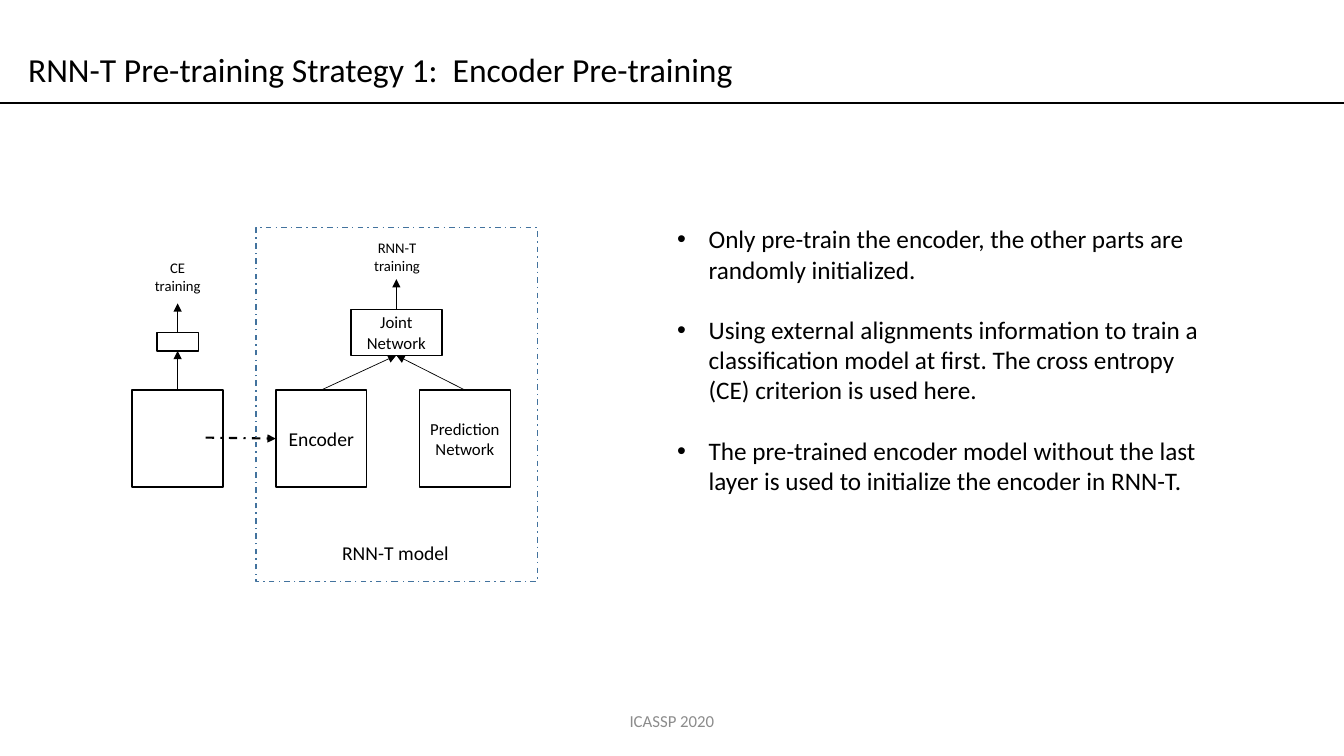
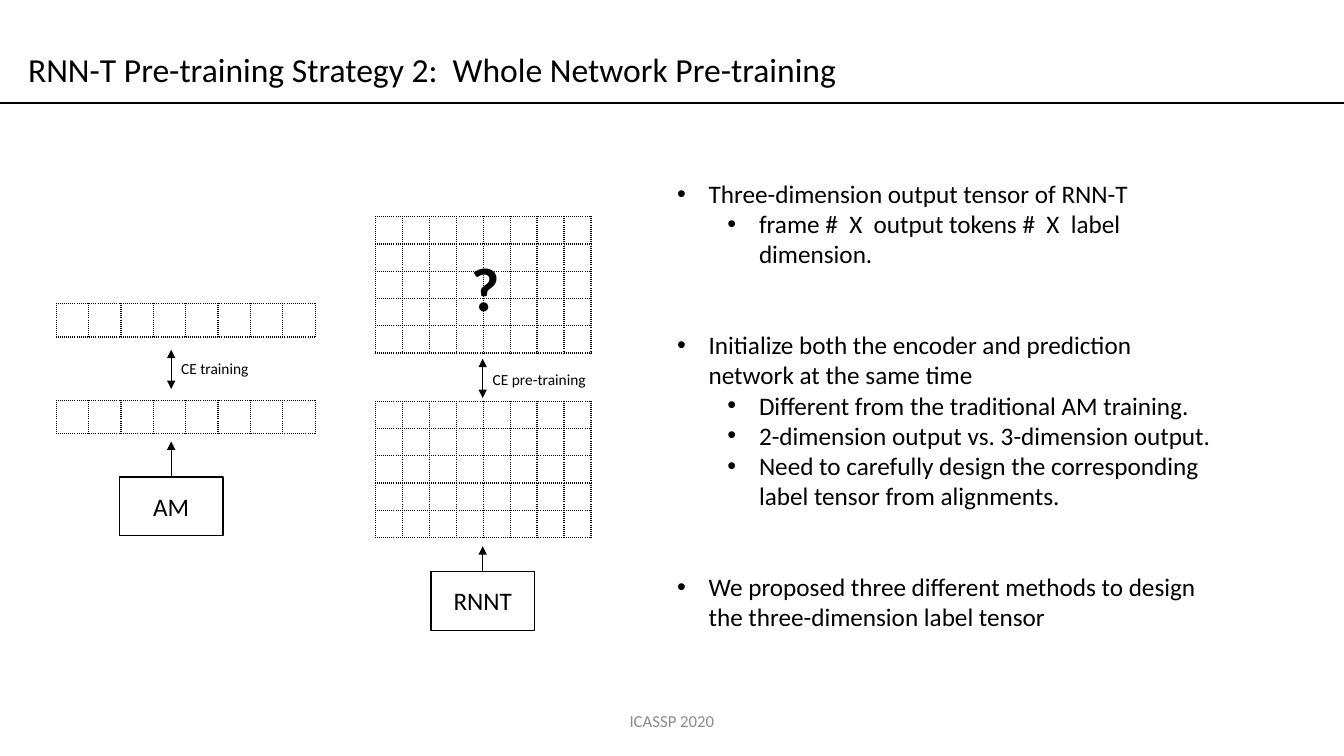
from lxml.etree import SubElement
from pptx import Presentation
from pptx.dml.color import RGBColor
from pptx.enum.dml import MSO_LINE
from pptx.enum.shapes import MSO_CONNECTOR, MSO_SHAPE
from pptx.enum.text import MSO_ANCHOR as ANCHOR, PP_ALIGN as ALIGN
from pptx.oxml.ns import qn
from pptx.util import Pt

BLACK = RGBColor(0x00, 0x00, 0x00)
WHITE = RGBColor(0xFF, 0xFF, 0xFF)
GRAY = RGBColor(0x8C, 0x8C, 0x8C)
BLUE = RGBColor(0x43, 0x73, 0x9E)
FONT = "Calibri"
PAGE_WIDTH, PAGE_HEIGHT = 960, 540
TOP, LEFT, BOTTOM = 0, 1, 2
INDENT = 22.5
BLANK_LINE = 21.6


def add_box(page, text, left, top, width, height, size=12, color=BLACK,
            align=ALIGN.CENTER, anchor=ANCHOR.TOP, outlined=False):
    area = Pt(left), Pt(top), Pt(width), Pt(height)
    if outlined:
        box = page.shapes.add_shape(MSO_SHAPE.RECTANGLE, *area)
        box.shadow.inherit = False
        box.fill.solid()
        box.fill.fore_color.rgb = WHITE
        box.line.color.rgb = BLACK
        box.line.width = Pt(1)
        box.text_frame.margin_left = box.text_frame.margin_right = 0
        anchor = ANCHOR.MIDDLE
    else:
        box = page.shapes.add_textbox(*area)
    frame = box.text_frame
    frame.word_wrap = True
    frame.vertical_anchor = anchor
    frame.text = text
    for para in frame.paragraphs:
        para.alignment = align
        for span in para.runs:
            span.font.name = FONT
            span.font.size = Pt(size)
            span.font.color.rgb = color
    return box


def add_line(page, start, end, width=0.5, dash=None, arrows=("tailEnd",)):
    line = page.shapes.add_connector(MSO_CONNECTOR.STRAIGHT, *map(Pt, start + end))
    line.line.color.rgb = BLACK
    line.line.width = Pt(width)
    if dash:
        line.line.dash_style = dash
    properties = line._element.spPr
    for arrow in arrows:
        SubElement(properties.find(qn("a:ln")), qn(f"a:{arrow}"), type="triangle")
    SubElement(properties, qn("a:effectLst"))
    return line


deck = Presentation()
deck.slide_width, deck.slide_height = Pt(PAGE_WIDTH), Pt(PAGE_HEIGHT)

contents = [
    ("RNN-T Pre-training Strategy 1:  Encoder Pre-training", 156.2, [
        (0, 0, "Only pre-train the encoder, the other parts are randomly initialized."),
        (0, 1, "Using external alignments information to train a classification model at first. "
               "The cross entropy (CE) criterion is used here."),
        (0, 1, "The pre-trained encoder model without the last layer is used to initialize "
               "the encoder in RNN-T."),
    ]),
    ("RNN-T Pre-training Strategy 2:  Whole Network Pre-training", 123.8, [
        (0, 0, "Three-dimension output tensor of RNN-T"),
        (1, 0, "frame #  X  output tokens #  X  label dimension."),
        (0, 2, "Initialize both the encoder and prediction network at the same time"),
        (1, 0, "Different from the traditional AM training."),
        (1, 0, "2-dimension output vs. 3-dimension output."),
        (1, 0, "Need to carefully design the corresponding label tensor from alignments."),
        (0, 2, "We proposed three different methods to design the three-dimension label tensor"),
    ]),
]

pages = []
for title, body_top, bullets in contents:
    page = deck.slides.add_slide(deck.slide_layouts[6])
    pages.append(page)
    add_box(page, title, 13, 31.7, 700, 36, 24, align=ALIGN.LEFT)
    add_line(page, (0, 73.4), (PAGE_WIDTH, 73.4), 1.5, arrows=())
    body = add_box(page, "\n".join(text for level, gap, text in bullets),
                   476.6, body_top, 401, 380, 18, align=ALIGN.LEFT)
    for para, (level, gap, text) in zip(body.text_frame.paragraphs, bullets):
        para.level = level
        para.space_before = Pt(gap * BLANK_LINE)
        properties = para._p.get_or_add_pPr()
        properties.set("marL", str(Pt(INDENT + 36 * level)))
        properties.set("indent", str(Pt(-INDENT)))
        SubElement(properties, qn("a:buFont"), typeface="Arial")
        SubElement(properties, qn("a:buChar"), char="•")
    add_box(page, "ICASSP 2020", 318, 500.4, 324, 28.8, 12, GRAY, anchor=ANCHOR.MIDDLE)

encoder_page, network_page = pages

model_frame = add_box(encoder_page, "", 182.9, 162.7, 200.9, 252.7, outlined=True)
model_frame.fill.background()
model_frame.line.color.rgb = BLUE
model_frame.line.dash_style = MSO_LINE.DASH_DOT
add_box(encoder_page, "RNN-T model", 230, 383, 105, 24.5, 14)

pretrained, encoder, prediction = [
    add_box(encoder_page, text, 94.4 + 102.6 * column, 278.6, 65, 69.4, size, outlined=True)
    for column, (text, size) in enumerate([("", 12), ("Encoder", 14), ("Prediction\nNetwork", 12)])
]
ce_layer = add_box(encoder_page, "", 112.1, 237.6, 29.6, 13, outlined=True)
joint = add_box(encoder_page, "Joint\nNetwork", 250.6, 221, 65, 32.8, outlined=True)
add_box(encoder_page, "CE\ntraining", 96.9, 181.4, 60, 32.4, 10.5)
add_box(encoder_page, "RNN-T\ntraining", 251.1, 167, 65, 32.4, 10.5)

for source, target in [(pretrained, ce_layer), (encoder, joint), (prediction, joint)]:
    arrow = add_line(encoder_page, (0, 0), (0, 0))
    arrow.begin_connect(source, TOP)
    arrow.end_connect(target, BOTTOM)
for source, x, y in [(ce_layer, 126.9, 216.7), (joint, 283.1, 199.4)]:
    add_line(encoder_page, (x, y + 20), (x, y)).begin_connect(source, TOP)
transfer = add_line(encoder_page, (146.9, 312.6), (197, 313.3), 1.5, MSO_LINE.DASH_DOT)
transfer.end_connect(encoder, LEFT)

COLUMNS = 8
for left, top, rows, cell_width, cell_height in [
    (40.1, 216.7, 1, 23.15, 24), (40.1, 285.8, 1, 23.15, 24),
    (268, 154.8, 5, 19.3, 19.5), (268, 286.6, 5, 19.3, 19.5),
]:
    table = network_page.shapes.add_table(
        rows, COLUMNS, Pt(left), Pt(top), Pt(cell_width * COLUMNS), Pt(cell_height * rows)).table
    table.first_row = table.horz_banding = False
    for column in table.columns:
        column.width = Pt(cell_width)
    for row in table.rows:
        row.height = Pt(cell_height)
    for cell in table.iter_cells():
        cell.margin_left = cell.margin_right = cell.margin_top = cell.margin_bottom = 0
        SubElement(cell.text_frame.paragraphs[0]._p, qn("a:endParaRPr"), sz="800")
        properties = cell._tc.get_or_add_tcPr()
        for side in ("lnL", "lnR", "lnT", "lnB"):
            border = SubElement(properties, qn(f"a:{side}"), w=str(Pt(1)))
            SubElement(SubElement(border, qn("a:solidFill")), qn("a:srgbClr"), val=str(BLACK))
            SubElement(border, qn("a:prstDash"), val="sysDot")
        cell.fill.solid()
        cell.fill.fore_color.rgb = WHITE

for name, x, model_top, output_bottom, label, label_top, exchange_top in [
    ("AM", 122.3, 340.6, 315.4, "CE training", 252.7, 249.8),
    ("RNNT", 344.8, 408.2, 390.2, "CE pre-training", 260.6, 256.3),
]:
    model = add_box(network_page, name, x - 37, model_top, 74, 42, 18, outlined=True)
    add_line(network_page, (x, model_top), (x, output_bottom)).begin_connect(model, TOP)
    add_line(network_page, (x, exchange_top), (x, exchange_top + 28),
             arrows=("headEnd", "tailEnd"))
    add_box(network_page, label, x, label_top, 100, 21, 11, align=ALIGN.LEFT)

question = add_box(network_page, "?", 321.5, 175, 50, 60.5, 44)
question.text_frame.paragraphs[0].runs[0].font.bold = True

deck.save("out.pptx")
